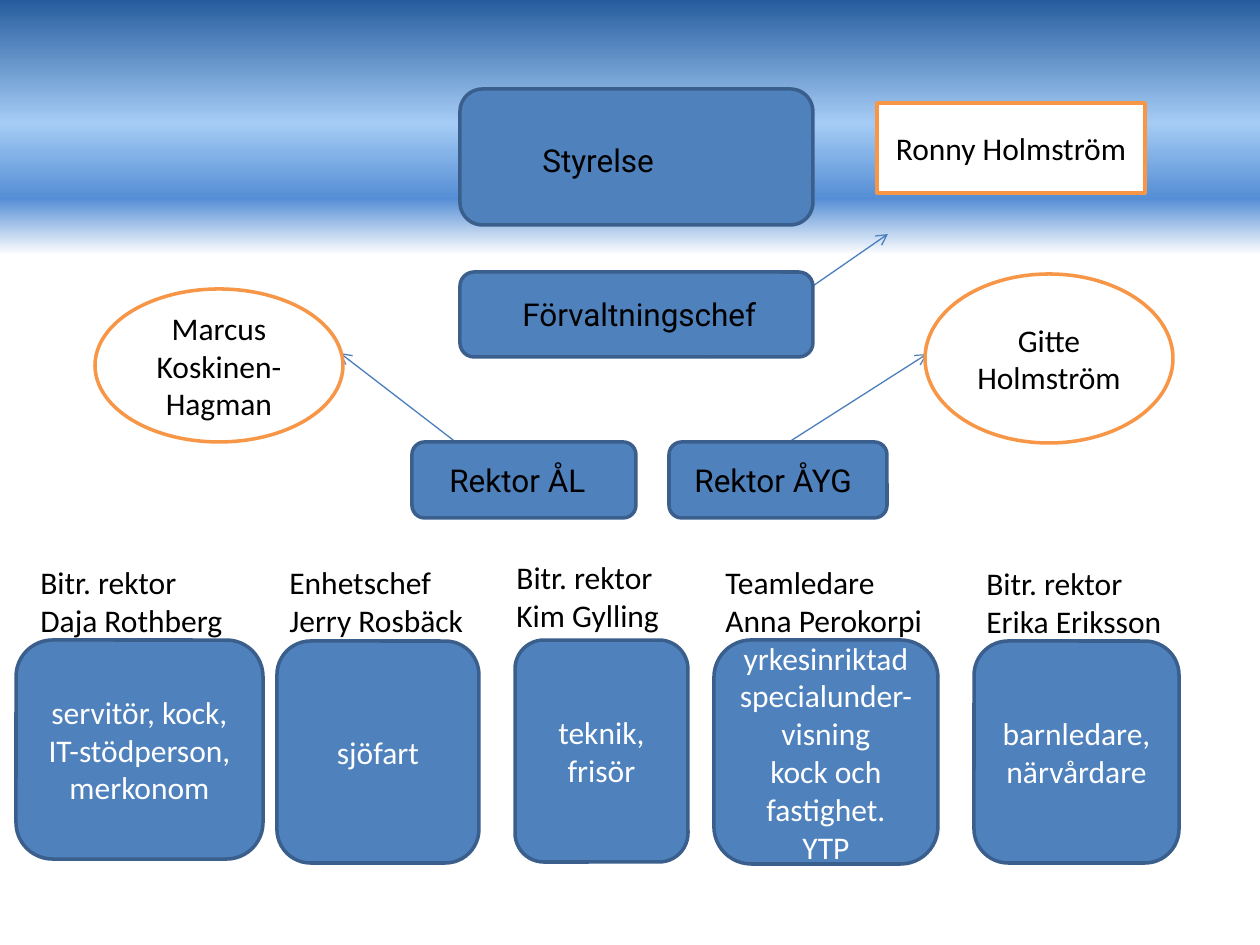
from dataclasses import dataclass

from lxml import etree
from pptx import Presentation
from pptx.dml.color import RGBColor
from pptx.enum.shapes import MSO_CONNECTOR, MSO_SHAPE
from pptx.enum.text import MSO_ANCHOR, MSO_AUTO_SIZE, PP_ALIGN
from pptx.oxml.ns import qn
from pptx.util import Pt

ROUNDED = MSO_SHAPE.ROUNDED_RECTANGLE
OVAL = MSO_SHAPE.OVAL
RECTANGLE = MSO_SHAPE.RECTANGLE
STRAIGHT = MSO_CONNECTOR.STRAIGHT
LEFT = PP_ALIGN.LEFT
CENTER = PP_ALIGN.CENTER
TOP = MSO_ANCHOR.TOP
MIDDLE = MSO_ANCHOR.MIDDLE
GROW = MSO_AUTO_SIZE.SHAPE_TO_FIT_TEXT

EMU_PER_PX = 914400 / 126
COLORS = {
    "blue": "4F81BD",
    "navy": "3A5F8C",
    "arrow": "4B7EBC",
    "orange": "F79646",
    "white": "FFFFFF",
    "black": "000000",
}
SKY_STOPS = [(0, "275D9F"), (13, "A5CCF5"), (21, "558ED5"), (27, "FFFFFF")]


@dataclass(frozen=True)
class Node:
    left: int
    top: int
    width: int
    height: int
    text: str = ""
    kind: MSO_SHAPE = ROUNDED
    fill: str = "blue"
    border: str = "navy"
    color: str = "white"


@dataclass(frozen=True)
class Person(Node):
    fill: str = "white"
    border: str = "orange"
    color: str = "black"


@dataclass(frozen=True)
class Label:
    left: int
    top: int
    width: int
    height: int
    text: str
    font: str = "Calibri"


@dataclass(frozen=True)
class Arrow:
    start: tuple[int, int]
    end: tuple[int, int]


ARROWS = [
    Arrow((789, 442), (927, 354)),
    Arrow((709, 358), (888, 234)),
    Arrow((509, 483), (340, 353)),
]
PEOPLE = [
    Person(925, 274, 248, 169, "Gitte Holmström", OVAL),
    Person(877, 103, 268, 90, "Ronny Holmström", RECTANGLE),
    Person(95, 289, 248, 153, "Marcus Koskinen-Hagman", OVAL),
]
ROLES = [
    Node(460, 89, 353, 136),
    Node(460, 272, 353, 85),
    Node(412, 442, 224, 76),
    Node(669, 442, 218, 76),
]
ROLE_LABELS = [
    Label(530, 135, 223, 50, "Styrelse", "Roboto"),
    Label(510, 289, 263, 50, "Förvaltningschef", "Roboto"),
    Label(437, 455, 174, 50, "Rektor ÅL", "Roboto"),
    Label(682, 455, 195, 50, "Rektor ÅYG", "Roboto"),
]
UNITS = [
    Node(16, 640, 247, 219, "servitör, kock, IT-stödperson, merkonom"),
    Node(277, 641, 202, 222, "sjöfart"),
    Node(515, 640, 173, 222, "teknik, frisör"),
    Node(714, 640, 224, 224,
         "yrkesinriktad specialunder-visning\nkock och\nfastighet.\nYTP"),
    Node(974, 641, 205, 222, "barnledare, närvårdare"),
]
UNIT_LABELS = [
    Label(28, 557, 226, 89, "Bitr. rektor\nDaja Rothberg"),
    Label(277, 557, 202, 89, "Enhetschef Jerry Rosbäck"),
    Label(504, 552, 195, 152, "Bitr. rektor Kim Gylling"),
    Label(713, 557, 234, 89, "Teamledare Anna Perokorpi"),
    Label(974, 558, 227, 89, "Bitr. rektor\nErika Eriksson"),
]


def px(value: int) -> int:
    return round(value * EMU_PER_PX)


def rgb(name: str) -> RGBColor:
    return RGBColor.from_string(COLORS[name])


def write_text(text_frame, text: str, *, font="Calibri", size=18,
               color="black", align=LEFT, anchor=TOP) -> None:
    text_frame.word_wrap = True
    text_frame.vertical_anchor = anchor
    text_frame.text = text
    for paragraph in text_frame.paragraphs:
        paragraph.alignment = align
        paragraph.font.name = font
        paragraph.font.size = Pt(size)
        paragraph.font.color.rgb = rgb(color)


def draw_node(slide, node: Node) -> None:
    shape = slide.shapes.add_shape(
        node.kind, px(node.left), px(node.top), px(node.width), px(node.height))
    shape.shadow.inherit = False
    shape.fill.solid()
    shape.fill.fore_color.rgb = rgb(node.fill)
    shape.line.color.rgb = rgb(node.border)
    shape.line.width = Pt(2)
    if node.text:
        write_text(shape.text_frame, node.text, color=node.color,
                   align=CENTER, anchor=MIDDLE)


def draw_label(slide, label: Label) -> None:
    box = slide.shapes.add_textbox(
        px(label.left), px(label.top), px(label.width), px(label.height))
    write_text(box.text_frame, label.text, font=label.font)
    box.text_frame.auto_size = GROW


def draw_arrow(slide, arrow: Arrow) -> None:
    connector = slide.shapes.add_connector(
        STRAIGHT, *map(px, arrow.start + arrow.end))
    connector.line.color.rgb = rgb("arrow")
    connector.line.width = Pt(0.75)
    properties = connector._element.spPr
    etree.SubElement(properties.find(qn("a:ln")), qn("a:tailEnd"), type="arrow")
    etree.SubElement(properties, qn("a:effectLst"))


def paint_background(slide) -> None:
    fill = slide.background.fill
    fill.gradient()
    fill.gradient_angle = 270
    stops = next(slide._element.iter(qn("a:gsLst")))
    for stop in list(stops):
        stops.remove(stop)
    for percent, color in SKY_STOPS:
        stop = etree.SubElement(stops, qn("a:gs"), pos=str(percent * 1000))
        etree.SubElement(stop, qn("a:srgbClr"), val=color)


def main() -> None:
    presentation = Presentation()
    presentation.slide_width = px(1260)
    presentation.slide_height = px(945)
    slide = presentation.slides.add_slide(presentation.slide_layouts[6])
    paint_background(slide)
    for arrow in ARROWS:
        draw_arrow(slide, arrow)
    for node in PEOPLE + ROLES + UNITS:
        draw_node(slide, node)
    for label in ROLE_LABELS + UNIT_LABELS:
        draw_label(slide, label)
    presentation.save("out.pptx")


if __name__ == "__main__":
    main()
